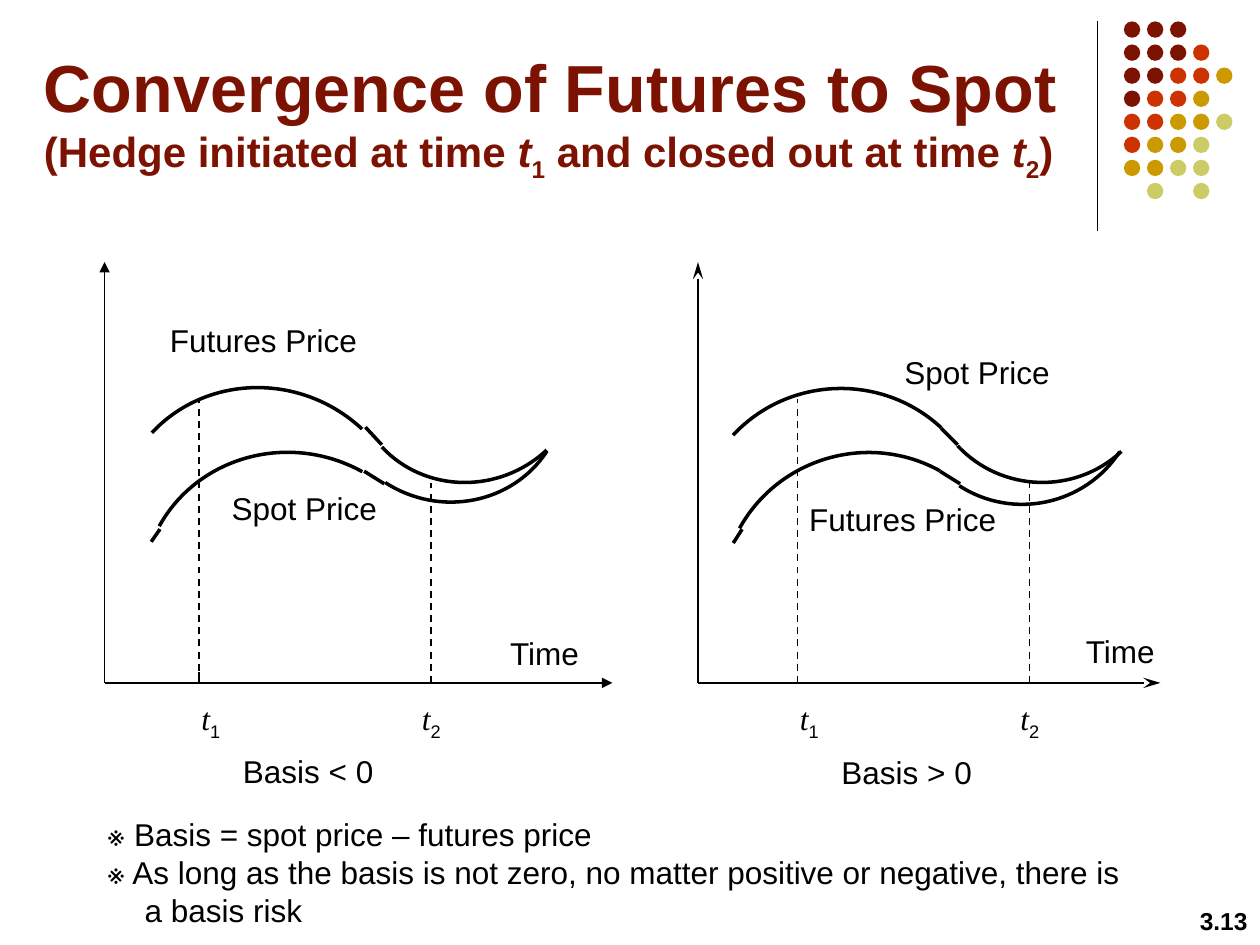
from lxml.etree import SubElement
from pptx import Presentation
from pptx.dml.color import RGBColor
from pptx.enum.dml import MSO_LINE
from pptx.enum.shapes import MSO_CONNECTOR, MSO_SHAPE
from pptx.enum.text import MSO_ANCHOR, PP_ALIGN
from pptx.oxml.ns import qn
from pptx.util import Cm, Pt

BLACK = "000000"
MAROON = "7C1302"
DOT_COLORS = {"M": MAROON, "R": "CC3300", "G": "CC9900", "L": "CCCC66"}
DOT_ROWS = ["MMM", "MMMR", "MMRRG", "MRRG", "RRGGL", "RGGL", "GGLL", " L L"]
DOT_PITCH = 0.183
AXIS_Y = 5.42
CHART_GAP = 4.75
CREST = [(0, 0), (0.55, 0), (1, 0.45), (1, 1)]
TROUGH = [(1, 0), (1, 0.55), (0.55, 1), (0, 1)]
WAVES = [(CREST, 313), (TROUGH, 47), (CREST, 299), (TROUGH, 33)]


def color(hex_text):
    return RGBColor.from_string(hex_text)


def inches(value):
    return Cm(value * 2.54)


class SlideBuilder:
    font_name = "Arial"
    math_font = "Times New Roman"
    text_size = 18

    def __init__(self, page):
        self.page = page

    def line(self, start, end, width=1, dashed=False, **arrows):
        line = self.page.shapes.add_connector(
            MSO_CONNECTOR.STRAIGHT, *map(inches, start + end))
        line.line.color.rgb = color(BLACK)
        line.line.width = Pt(width)
        if dashed:
            line.line.dash_style = MSO_LINE.DASH
        properties = line._element.spPr
        for tag, kind in arrows.items():
            SubElement(properties.find(qn("a:ln")), qn(f"a:{tag}"), type=kind,
                       len="lg" if kind == "stealth" else "med")
        SubElement(properties, qn("a:effectLst"))

    def curve(self, place, quarter, rotation):
        left, top, width, height = place
        points = [(inches(left + x * width), inches(top + y * height))
                  for x, y in quarter]
        builder = self.page.shapes.build_freeform(*points[0], scale=1.0)
        builder.add_line_segments(points[1:], close=False)
        arc = builder.convert_to_shape()
        outline = next(arc._element.iter(qn("a:path")))
        cubic = SubElement(outline, qn("a:cubicBezTo"))
        for segment in outline.findall(qn("a:lnTo")):
            cubic.append(segment[0])
            outline.remove(segment)
        arc.rotation = rotation
        arc.shadow.inherit = False
        arc.fill.background()
        arc.line.color.rgb = color(BLACK)
        arc.line.width = Pt(2)

    def dot(self, left, top, fill):
        dot = self.page.shapes.add_shape(
            MSO_SHAPE.OVAL, *map(inches, (left, top, 0.13, 0.13)))
        dot.shadow.inherit = False
        dot.fill.solid()
        dot.fill.fore_color.rgb = color(fill)
        dot.line.fill.background()

    def text(self, place, paragraphs, size=text_size, fill=BLACK, bold=False,
             align=PP_ALIGN.LEFT, wrap=True, anchor=MSO_ANCHOR.TOP, hanging=0):
        box = self.page.shapes.add_textbox(*map(inches, place))
        frame = box.text_frame
        frame.word_wrap = wrap
        frame.vertical_anchor = anchor
        for index, spans in enumerate(paragraphs):
            para = frame.add_paragraph() if index else frame.paragraphs[0]
            para.alignment = align
            para.font.name = self.font_name
            para.font.size = Pt(size)
            para.font.bold = bold
            para.font.color.rgb = color(fill)
            if hanging:
                indent = para._p.get_or_add_pPr()
                indent.set("marL", str(inches(hanging)))
                indent.set("indent", str(-inches(hanging)))
            for item in spans:
                self.span(para, *item)

    def span(self, para, words, style="", font_name=None, size=None):
        if words == "\n":
            para.add_line_break()
            return
        span = para.add_run()
        span.text = words
        if style == "italic":
            span.font.italic = True
        if style == "subscript":
            span._r.get_or_add_rPr().set("baseline", "-25000")
        if font_name:
            span.font.name = font_name
        if size:
            span.font.size = Pt(size)

    def label(self, place, words, **options):
        self.text(place, [[(words,)]], **options)

    def price_chart(self, offset, corner_x, end_x, arrow, arcs, joins, basis, basis_top):
        self.line((corner_x, 2.08), (corner_x, AXIS_Y), headEnd=arrow)
        self.line((corner_x, AXIS_Y), (end_x, AXIS_Y), tailEnd=arrow)
        for place, (quarter, rotation) in zip(arcs, WAVES):
            self.curve(place, quarter, rotation)
        for start, end in joins:
            self.line(start, end, width=2)
        times = [("1", 1.58, 3.17, 1.5), ("2", 3.42, 3.83, 3.25)]
        for number, x, top, left in times:
            self.line((x + offset, AXIS_Y), (x + offset, top), dashed=True)
            self.text((left + offset, 5.5, 0.42, 0.4),
                      [[("t", "italic", self.math_font), (number, "subscript")]])
        self.label((1.83 + offset, basis_top, 2.42, 0.4), basis)


def main():
    deck = Presentation()
    deck.slide_width = Cm(25.4)
    deck.slide_height = Cm(19.05)
    builder = SlideBuilder(deck.slides.add_slide(deck.slide_layouts[6]))

    builder.line((8.71, 0.17), (8.71, 1.83), width=0.75)
    for row, codes in enumerate(DOT_ROWS):
        for column, code in enumerate(codes):
            if code in DOT_COLORS:
                builder.dot(8.92 + column * DOT_PITCH, 0.17 + row * DOT_PITCH,
                            DOT_COLORS[code])

    subtitle = [("(Hedge initiated at time ", ""), ("t", "italic"), ("1", "subscript"),
                (" and closed out at time ", ""), ("t", "italic"), ("2", "subscript"),
                (")", "")]
    builder.text((0.25, 0.4, 8.45, 1.02),
                 [[("Convergence of Futures to Spot",), ("\n",)]
                  + [(words, style, None, 24) for words, style in subtitle]],
                 size=38, fill=MAROON, bold=True, anchor=MSO_ANCHOR.MIDDLE)
    builder.label((9.33, 7.14, 0.67, 0.36), "3.13", size=14, bold=True,
                  align=PP_ALIGN.RIGHT)

    builder.price_chart(
        0, 0.83, 4.86, "triangle",
        [(1.46, 2.82, 1.16, 1.2), (3.23, 3.09, 0.91, 0.94),
         (1.49, 3.36, 1.16, 1.2), (3.23, 3.25, 0.94, 0.91)],
        [((2.9, 3.39), (3.03, 3.53)), ((2.89, 3.74), (3.05, 3.84)),
         ((1.27, 4.2), (1.2, 4.3))],
        "Basis < 0", 5.92)
    builder.line((1.58, AXIS_Y), (1.58, 5.33))
    builder.price_chart(
        CHART_GAP, 5.54, 9.21, "stealth",
        [(6.06, 2.84, 1.17, 1.17), (7.79, 3.1, 0.92, 0.92),
         (6.08, 3.38, 1.17, 1.17), (7.79, 3.26, 0.92, 0.92)],
        [((7.47, 3.4), (7.6, 3.53)), ((7.46, 3.74), (7.62, 3.84)),
         ((5.89, 4.2), (5.82, 4.31))],
        "Basis > 0", 5.93)

    builder.label((3.95, 4.98, 0.75, 0.4), "Time", wrap=False)
    builder.label((8.52, 4.97, 0.76, 0.4), "Time", wrap=False)
    builder.label((1.25, 2.5, 3.6, 0.4), "Futures Price")
    builder.label((1.58, 3.83, 1.67, 0.4), "Spot Price", align=PP_ALIGN.CENTER)
    builder.label((7.08, 2.75, 1.35, 0.4), "Spot Price", align=PP_ALIGN.CENTER, wrap=False)
    builder.label((6.25, 3.92, 1.83, 0.4), "Futures Price", align=PP_ALIGN.CENTER)

    builder.text((0.75, 6.42, 8.25, 1.01),
                 [[("※ Basis = spot price – futures price",)],
                  [("※ As long as the basis is not zero, no matter positive or "
                    "negative, there is a basis risk",)]],
                 hanging=0.3)
    deck.save("out.pptx")


if __name__ == "__main__":
    main()
